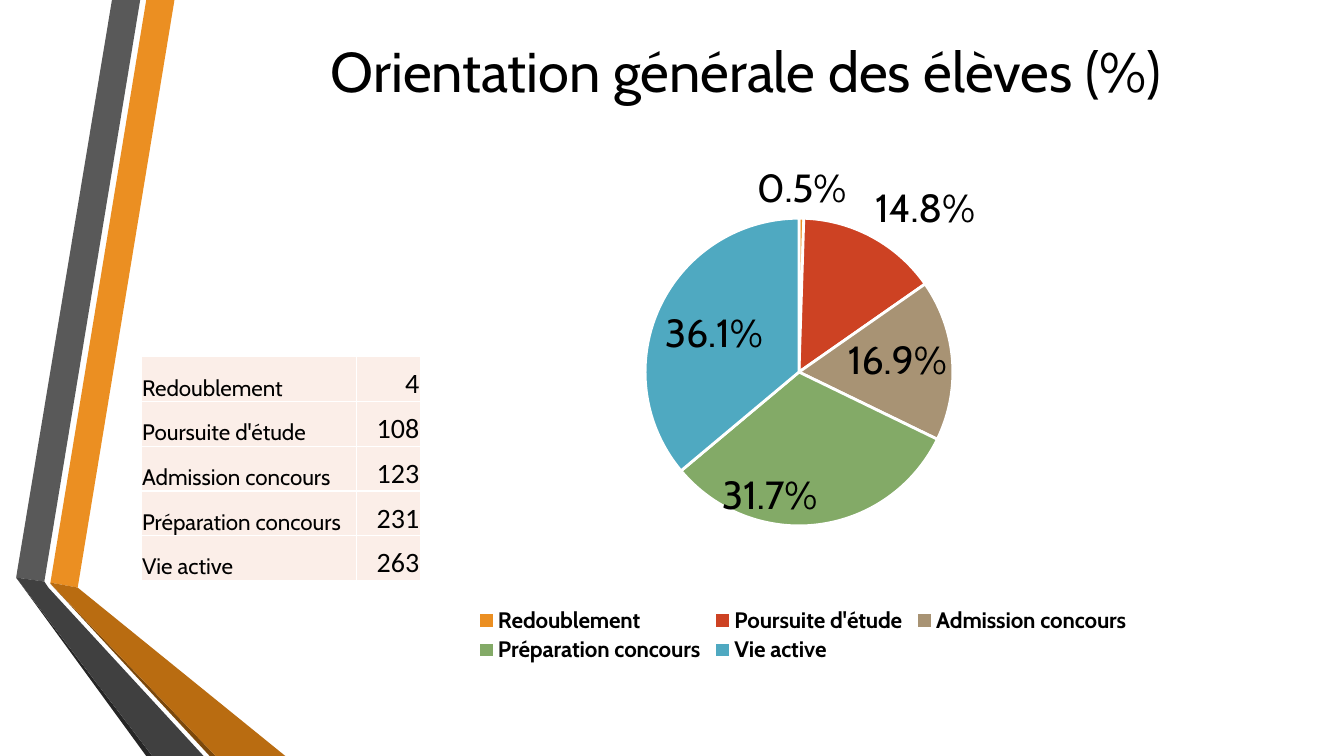
"""Builds the slide on the general orientation of pupils."""
from lxml import etree
from pptx import Presentation
from pptx import util as u
from pptx.chart import data as chart_data
from pptx.dml.color import RGBColor
from pptx.enum import chart as chart_enum
from pptx.enum import text
from pptx.oxml.ns import qn

WIDTH, HEIGHT = u.Inches(13.33), u.Inches(7.5)
BLACK = RGBColor(0, 0, 0)
WHITE = RGBColor(0xFF, 0xFF, 0xFF)
ORANGE = RGBColor(0xEB, 0x8F, 0x22)
DARK_ORANGE = RGBColor(0xB9, 0x6C, 0x11)
BROWN = RGBColor(0x7B, 0x48, 0x0B)
GREY = RGBColor(0x59, 0x59, 0x59)
DARK_GREY = RGBColor(0x40, 0x40, 0x40)
NEAR_BLACK = RGBColor(0x26, 0x26, 0x26)
PALE_PINK = RGBColor(0xFB, 0xEE, 0xE8)
RED = RGBColor(0xCD, 0x42, 0x23)
TAN = RGBColor(0xA8, 0x93, 0x74)
GREEN = RGBColor(0x83, 0xAA, 0x67)
BLUE = RGBColor(0x4F, 0xA9, 0xC1)

PERCENT_FORMAT = '0.0"%"'
INSIDE = chart_enum.XL_LABEL_POSITION.INSIDE_END
OUTSIDE = chart_enum.XL_LABEL_POSITION.OUTSIDE_END
ORIENTATIONS = [
    ("Redoublement", 4, 0.5, ORANGE, OUTSIDE),
    ("Poursuite d'étude", 108, 14.8, RED, OUTSIDE),
    ("Admission concours", 123, 16.9, TAN, INSIDE),
    ("Préparation concours", 231, 31.7, GREEN, INSIDE),
    ("Vie active", 263, 36.1, BLUE, INSIDE),
]
RIBBONS = [
    (ORANGE, [(3.75, 77.07), (5.78, 77.73), (12.98, 0), (10.88, 0)]),
    (GREY, [(10.43, 0), (8.33, 0), (1.2, 76.4), (3.3, 76.93)]),
    (NEAR_BLACK, [(1.2, 76.4), (10.88, 100), (11.33, 100)]),
    (BROWN, [(3.75, 77.2), (15.6, 100), (16.05, 100)]),
    (DARK_ORANGE, [(3.75, 77.07), (3.75, 77.2), (16.05, 100), (21.23, 100), (5.78, 77.73)]),
    (DARK_GREY, [(15.15, 100), (3.6, 77.73), (3.3, 76.93), (1.2, 76.4), (11.33, 100)]),
]


def across(percent):
    """Return a percentage of the slide's width."""
    return round(WIDTH * percent / 100)


def down(percent):
    """Return a percentage of the slide's height."""
    return round(HEIGHT * percent / 100)


def frame(left, top, width, height):
    """Return a rectangle given in percentages of the slide."""
    return across(left), down(top), across(width), down(height)


def style_font(font, size, name="Cabin", bold=False):
    """Give a font its face, size, weight and black colour."""
    font.name, font.size, font.bold = name, u.Pt(size), bold
    font.color.rgb = BLACK


def add_run(para, words, align, size, name="Cabin"):
    """Add an aligned run of text to a paragraph."""
    para.alignment = align
    span = para.add_run()
    span.text = words
    style_font(span.font, size, name)


def add_ribbon(page, color, corners):
    """Draw one filled facet of the side ribbon."""
    points = [(across(x), down(y)) for x, y in corners]
    builder = page.shapes.build_freeform(*points[0])
    builder.add_line_segments(points[1:], close=True)
    facet = builder.convert_to_shape()
    facet.shadow.inherit = False
    facet.fill.solid()
    facet.fill.fore_color.rgb = color
    facet.line.fill.background()


def add_title(page, words):
    """Place and fill the title placeholder."""
    title = page.shapes.title
    title.left, title.top, title.width, title.height = frame(14.4, 4, 82.2, 10.53)
    box = title.text_frame
    box.word_wrap = True
    box.vertical_anchor = text.MSO_ANCHOR.MIDDLE
    add_run(box.paragraphs[0], words, text.PP_ALIGN.CENTER, 40)


def add_borders(cell):
    """Put a thin white line on each side of a cell."""
    properties = cell._tc.get_or_add_tcPr()
    for place, side in enumerate(("a:lnL", "a:lnR", "a:lnT", "a:lnB")):
        line = etree.Element(qn(side), w=str(u.Pt(1)))
        fill = etree.SubElement(line, qn("a:solidFill"))
        etree.SubElement(fill, qn("a:srgbClr"), val=str(WHITE))
        properties.insert(place, line)


def fill_cell(cell, words, align, size, name):
    """Write and format one table cell."""
    cell.fill.solid()
    cell.fill.fore_color.rgb = PALE_PINK
    cell.margin_left = cell.margin_right = cell.margin_top = u.Inches(0.01)
    cell.margin_bottom = 0
    cell.vertical_anchor = text.MSO_ANCHOR.BOTTOM
    add_run(cell.text_frame.paragraphs[0], words, align, size, name)
    add_borders(cell)


def add_counts(page):
    """Add the table of pupils per orientation."""
    table = page.shapes.add_table(len(ORIENTATIONS), 2, *frame(10.5, 47.2, 20.78, 29.6)).table
    table.first_row = table.horz_banding = False
    for column, share in zip(table.columns, (16.05, 4.73)):
        column.width = across(share)
    for row, (label, count, *_) in enumerate(ORIENTATIONS):
        fill_cell(table.cell(row, 0), label, text.PP_ALIGN.LEFT, 16, "Cabin")
        fill_cell(table.cell(row, 1), str(count), text.PP_ALIGN.RIGHT, 20, "Calibri")


def make_layout(inner=False, **shares):
    """Return a manual chart layout from shares of the chart's size."""
    layout = etree.Element(qn("c:layout"))
    manual = etree.SubElement(layout, qn("c:manualLayout"))
    if inner:
        etree.SubElement(manual, qn("c:layoutTarget"), val="inner")
    for mode in ("c:xMode", "c:yMode"):
        etree.SubElement(manual, qn(mode), val="edge")
    for key, share in shares.items():
        etree.SubElement(manual, qn("c:" + key), val=str(share))
    return layout


def place_plot(chart):
    """Fix the place of the pie inside the chart."""
    area = chart._chartSpace.find(".//" + qn("c:plotArea"))
    for automatic in area.findall(qn("c:layout")):
        area.remove(automatic)
    area.insert(0, make_layout(inner=True, x=0.3, y=0.13, w=0.39, h=0.6))


def add_legend(chart):
    """Show the legend in two rows below the pie."""
    chart.has_legend = True
    legend = chart.legend
    legend.position = chart_enum.XL_LEGEND_POSITION.BOTTOM
    legend.include_in_layout = False
    style_font(legend.font, 16, bold=True)
    for automatic in legend._element.findall(qn("c:layout")):
        legend._element.remove(automatic)
    position = legend._element.find(qn("c:legendPos"))
    position.addnext(make_layout(x=0.08, y=0.88, w=0.84, h=0.12))


def add_pie(page):
    """Add the pie of shares per orientation."""
    data = chart_data.CategoryChartData(number_format=PERCENT_FORMAT)
    data.categories = [row[0] for row in ORIENTATIONS]
    data.add_series("Orientation", [row[2] for row in ORIENTATIONS])
    kind = chart_enum.XL_CHART_TYPE.PIE
    chart = page.shapes.add_chart(kind, *frame(30.38, 19.87, 58.73, 68.27), data).chart
    chart.has_title = False
    style_font(chart.font, 10)
    place_plot(chart)
    add_legend(chart)
    chart.plots[0].vary_by_categories = True
    series = chart.plots[0].series[0]
    labels = series.data_labels
    labels.show_value = True
    labels.number_format = PERCENT_FORMAT
    labels.number_format_is_linked = False
    style_font(labels.font, 28)
    for index, (*_, color, position) in enumerate(ORIENTATIONS):
        point = series.points[index]
        point.format.fill.solid()
        point.format.fill.fore_color.rgb = color
        point.format.line.color.rgb = WHITE
        point.format.line.width = u.Pt(2)
        style_font(point.data_label.font, 28)
        point.data_label.position = position
    for label in labels._element.findall(qn("c:dLbl")):
        number = etree.Element(qn("c:numFmt"), formatCode=PERCENT_FORMAT, sourceLinked="0")
        label.find(qn("c:idx")).addnext(number)


def main():
    """Build the slide and save the deck."""
    deck = Presentation()
    deck.slide_width, deck.slide_height = WIDTH, HEIGHT
    page = deck.slides.add_slide(deck.slide_layouts[5])
    for color, corners in RIBBONS:
        add_ribbon(page, color, corners)
    add_title(page, "Orientation générale des élèves (%)")
    add_counts(page)
    add_pie(page)
    deck.save("out.pptx")


if __name__ == "__main__":
    main()
